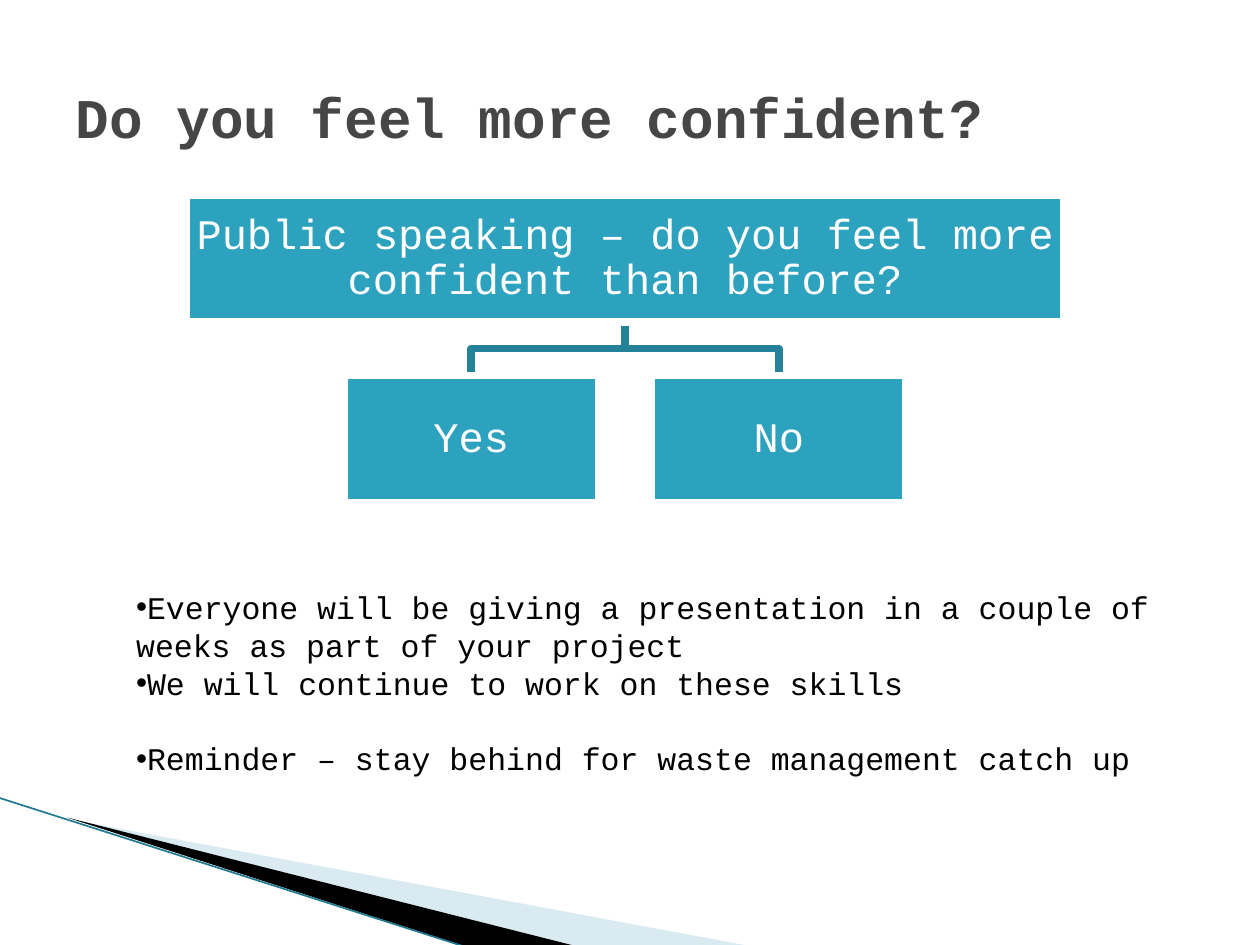
from lxml.etree import SubElement
from pptx import Presentation
from pptx.dml.color import RGBColor
from pptx.enum.shapes import MSO_CONNECTOR, MSO_SHAPE
from pptx.enum.text import MSO_ANCHOR, MSO_AUTO_SIZE, PP_ALIGN
from pptx.oxml.ns import qn
from pptx.util import Cm, Pt


def rgb(value):
    return RGBColor.from_string(value)


def apply(target, values):
    for key, value in values.items():
        setattr(target, key, value)


class Deck:
    FONT = "Courier New"
    INK, TITLE, WHITE = "000000", "464646", "FFFFFF"
    NODE, BRANCH, EDGE, PALE = "2DA2BF", "248299", "1F7A8F", "A0CBDC"
    NODE_LINE = Pt(4.33)

    def __init__(self, slide):
        self.slide = slide
        self.shapes = slide.shapes

    def place(self, shape, left, top, width, height):
        apply(shape, {"left": Cm(left), "top": Cm(top),
                      "width": Cm(width), "height": Cm(height)})

    def set_text(self, paragraph, text, size, color, bold=False):
        paragraph.text = text
        apply(paragraph.font, {"name": self.FONT, "size": Pt(size), "bold": bold})
        paragraph.font.color.rgb = rgb(color)

    def title(self, text, box):
        heading = self.shapes.title
        self.place(heading, *box)
        apply(heading.text_frame, {"vertical_anchor": MSO_ANCHOR.MIDDLE, "word_wrap": True,
                                   "auto_size": MSO_AUTO_SIZE.NONE})
        paragraph = heading.text_frame.paragraphs[0]
        paragraph.alignment = PP_ALIGN.LEFT
        self.set_text(paragraph, text, 32, self.TITLE, bold=True)

    def bullets(self, items, box):
        """Fill the body with (text, space before in points) pairs."""
        body = self.slide.placeholders[1]
        self.place(body, *box)
        frame = body.text_frame
        apply(frame, {"word_wrap": True, "auto_size": MSO_AUTO_SIZE.NONE})
        for index, (text, gap) in enumerate(items):
            paragraph = frame.add_paragraph() if index else frame.paragraphs[0]
            props = paragraph._p.get_or_add_pPr()
            props.set("marL", "0")
            props.set("indent", "0")
            SubElement(props, qn("a:buFont"), typeface="Arial")
            SubElement(props, qn("a:buChar"), char="•")
            paragraph.space_before = Pt(gap)
            self.set_text(paragraph, text, 18, self.INK)

    def node(self, text, left, top, width, height):
        box = self.shapes.add_shape(MSO_SHAPE.RECTANGLE, Cm(left), Cm(top),
                                    Cm(width), Cm(height))
        box.shadow.inherit = False
        box.fill.solid()
        box.fill.fore_color.rgb = rgb(self.NODE)
        box.line.color.rgb = rgb(self.WHITE)
        box.line.width = self.NODE_LINE
        margins = {f"margin_{side}": Cm(0.05) for side in ("left", "top", "right", "bottom")}
        apply(box.text_frame, {"word_wrap": True, "vertical_anchor": MSO_ANCHOR.MIDDLE, **margins})
        paragraph = box.text_frame.paragraphs[0]
        apply(paragraph, {"alignment": PP_ALIGN.CENTER, "line_spacing": 0.9})
        self.set_text(paragraph, text, 24, self.WHITE)

    def outline(self, points, close):
        start, *rest = [(Cm(x), Cm(y)) for x, y in points]
        builder = self.shapes.build_freeform(*start)
        builder.add_line_segments(rest, close=close)
        shape = builder.convert_to_shape()
        shape.shadow.inherit = False
        return shape

    def wedge(self, points, color, opacity=100):
        shape = self.outline(points, close=True)
        shape.fill.solid()
        shape.fill.fore_color.rgb = rgb(color)
        shape.line.fill.background()
        if opacity < 100:
            tint = shape._element.spPr.find(qn("a:solidFill"))[0]
            SubElement(tint, qn("a:alpha"), val=str(opacity * 1000))

    def branch(self, points):
        shape = self.outline(points, close=False)
        shape.fill.background()
        shape.line.color.rgb = rgb(self.BRANCH)
        shape.line.width = self.NODE_LINE

    def rule(self, x1, y1, x2, y2):
        line = self.shapes.add_connector(MSO_CONNECTOR.STRAIGHT, Cm(x1), Cm(y1), Cm(x2), Cm(y2))
        line.line.color.rgb = rgb(self.EDGE)
        line.line.width = Pt(0.95)
        SubElement(line._element.spPr, qn("a:effectLst"))


def main():
    presentation = Presentation()
    apply(presentation, {"slide_width": Cm(25.4), "slide_height": Cm(19.05)})
    deck = Deck(presentation.slides.add_slide(presentation.slide_layouts[1]))

    deck.wedge([(1.4, 16.52), (15.11, 19.07), (11.58, 19.07)], deck.PALE, opacity=40)
    deck.wedge([(1.35, 16.48), (11.6, 19.07), (9.45, 19.1)], deck.INK)
    deck.rule(-0.03, 16.08, 9.42, 19.1)

    center, root_top, root_width = 12.6, 3.93, 17.7
    answer_top, answer_width, height, pitch = 7.57, 5.13, 2.56, 6.2
    answers = {"Yes": center - pitch / 2, "No": center + pitch / 2}
    root_bottom = root_top + height
    bend = root_bottom + 0.54
    for x in answers.values():
        deck.branch([(center, root_bottom), (center, bend), (x, bend), (x, answer_top)])
    deck.node("Public speaking – do you feel more confident than before?",
              center - root_width / 2, root_top, root_width, height)
    for answer, x in answers.items():
        deck.node(answer, x - answer_width / 2, answer_top, answer_width, height)

    deck.title("Do you feel more confident?", (1.27, 0.76, 22.86, 3.18))
    deck.bullets([
        ("Everyone will be giving a presentation in a couple of weeks as part of your project", 0),
        ("We will continue to work on these skills", 0),
        ("Reminder – stay behind for waste management catch up", 21.6),
    ], (2.49, 11.73, 21.21, 4.11))

    presentation.save("out.pptx")


if __name__ == "__main__":
    main()
